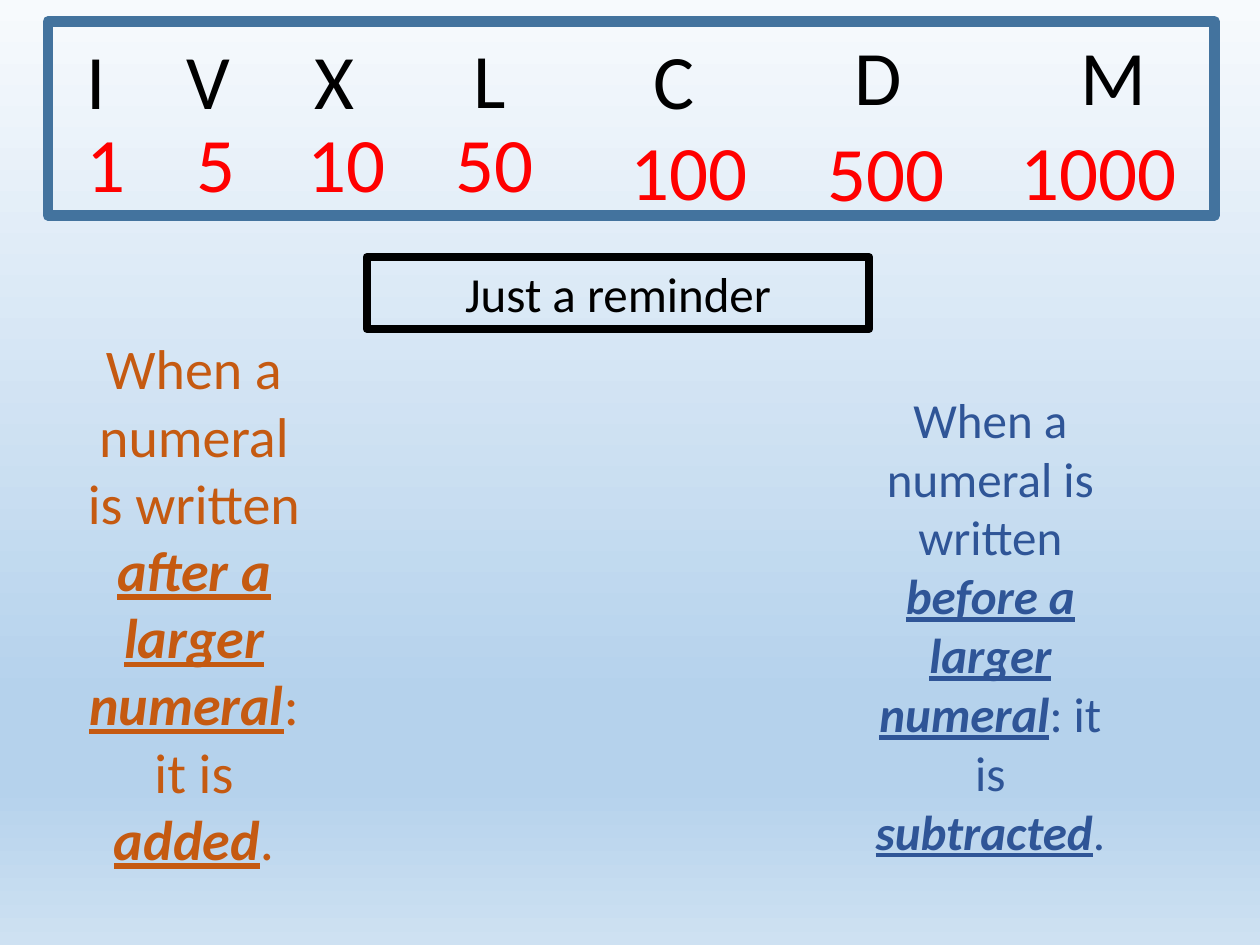
from lxml import etree
from pptx import Presentation
from pptx.dml.color import RGBColor
from pptx.enum import shapes, text
from pptx.oxml import ns
from pptx.util import Inches, Pt

BLACK = RGBColor(0x00, 0x00, 0x00)
RED = RGBColor(0xFF, 0x00, 0x00)
FRAME_BLUE = RGBColor(0x43, 0x73, 0x9E)
ORANGE = RGBColor(0xC5, 0x5A, 0x11)
BLUE = RGBColor(0x2F, 0x55, 0x97)
SKY_STOPS = [
    (0, RGBColor(0xF7, 0xFA, 0xFD)),
    (74, RGBColor(0xB5, 0xD2, 0xEC)),
    (83, RGBColor(0xB5, 0xD2, 0xEC)),
    (100, RGBColor(0xCE, 0xE1, 0xF2)),
]
FONT = "Calibri"

NUMERALS = [
    ("I", 0.21, 0.04, "1", 0.21, 0.70, 0.45),
    ("V", 1.00, 0.04, "5", 1.08, 0.70, 0.45),
    ("X", 2.02, 0.04, "10", 1.96, 0.70, 1.02),
    ("L", 3.28, 0.03, "50", 3.14, 0.70, 1.02),
    ("C", 4.71, 0.04, "100", 4.53, 0.76, 1.33),
    ("D", 6.30, 0.01, "500", 6.09, 0.77, 1.32),
    ("M", 8.10, 0.01, "1000", 7.62, 0.76, 1.59),
]


def format_run(run, size, color, emphasis=False):
    run.font.name = FONT
    run.font.size = Pt(size)
    run.font.color.rgb = color
    if emphasis:
        run.font.bold = run.font.italic = run.font.underline = True


def add_text(slide, left, top, width, height, parts, size, color, align):
    box = slide.shapes.add_textbox(
        Inches(left), Inches(top), Inches(width), Inches(height))
    box.text_frame.word_wrap = True
    box.text_frame.auto_size = text.MSO_AUTO_SIZE.SHAPE_TO_FIT_TEXT
    paragraph = box.text_frame.paragraphs[0]
    paragraph.alignment = align
    for index, part in enumerate(parts):
        run = paragraph.add_run()
        run.text = part
        format_run(run, size, color, emphasis=index % 2 == 1)


def set_background(slide):
    fill = slide.background.fill
    fill.gradient()
    fill.gradient_angle = 270
    stop_list = slide.element.find(".//" + ns.qn("a:gsLst"))
    for stop in list(stop_list):
        stop_list.remove(stop)
    for position, color in SKY_STOPS:
        stop = etree.SubElement(
            stop_list, ns.qn("a:gs"), pos=str(position * 1000))
        etree.SubElement(stop, ns.qn("a:srgbClr"), val=str(color))


def add_numeral_chart(slide, left, top, width, height):
    frame = slide.shapes.add_shape(
        shapes.MSO_SHAPE.RECTANGLE,
        Inches(left), Inches(top), Inches(width), Inches(height))
    frame.shadow.inherit = False
    frame.fill.background()
    frame.line.color.rgb = FRAME_BLUE
    frame.line.width = Pt(6)
    for letter, letter_x, letter_y, value, value_x, value_y, value_width in NUMERALS:
        add_text(slide, left + letter_x, top + letter_y, 0.45, 0.84,
                 [letter], 44, BLACK, text.PP_ALIGN.LEFT)
        add_text(slide, left + value_x, top + value_y, value_width, 0.84,
                 [value], 44, RED, text.PP_ALIGN.LEFT)


def place_title(slide, left, top, width, height):
    title = slide.shapes.title
    title.left, title.top = Inches(left), Inches(top)
    title.width, title.height = Inches(width), Inches(height)
    title.line.color.rgb = BLACK
    title.line.width = Pt(4.5)
    frame = title.text_frame
    frame.text = "Just a reminder"
    frame.word_wrap = True
    frame.auto_size = text.MSO_AUTO_SIZE.NONE
    frame.vertical_anchor = text.MSO_ANCHOR.MIDDLE
    paragraph = frame.paragraphs[0]
    paragraph.alignment = text.PP_ALIGN.CENTER
    format_run(paragraph.runs[0], 28, BLACK)


def add_rule(slide, left, top, width, height, position, result, size, color):
    parts = ["When a numeral is written ", f"{position} a larger numeral",
             ": it is ", result, "."]
    add_text(slide, left, top, width, height, parts, size, color,
             text.PP_ALIGN.CENTER)


def main():
    presentation = Presentation()
    presentation.slide_width = Inches(10)
    presentation.slide_height = Inches(7.5)
    slide = presentation.slides.add_slide(presentation.slide_layouts[5])
    set_background(slide)
    add_numeral_chart(slide, 0.38, 0.17, 9.26, 1.54)
    place_title(slide, 2.91, 2.04, 3.99, 0.57)
    add_rule(slide, 0.59, 2.6, 1.9, 4.41, "after", "added", 32, ORANGE)
    add_rule(slide, 6.79, 3.04, 2.14, 3.87, "before", "subtracted", 28, BLUE)
    presentation.save("out.pptx")


if __name__ == "__main__":
    main()
